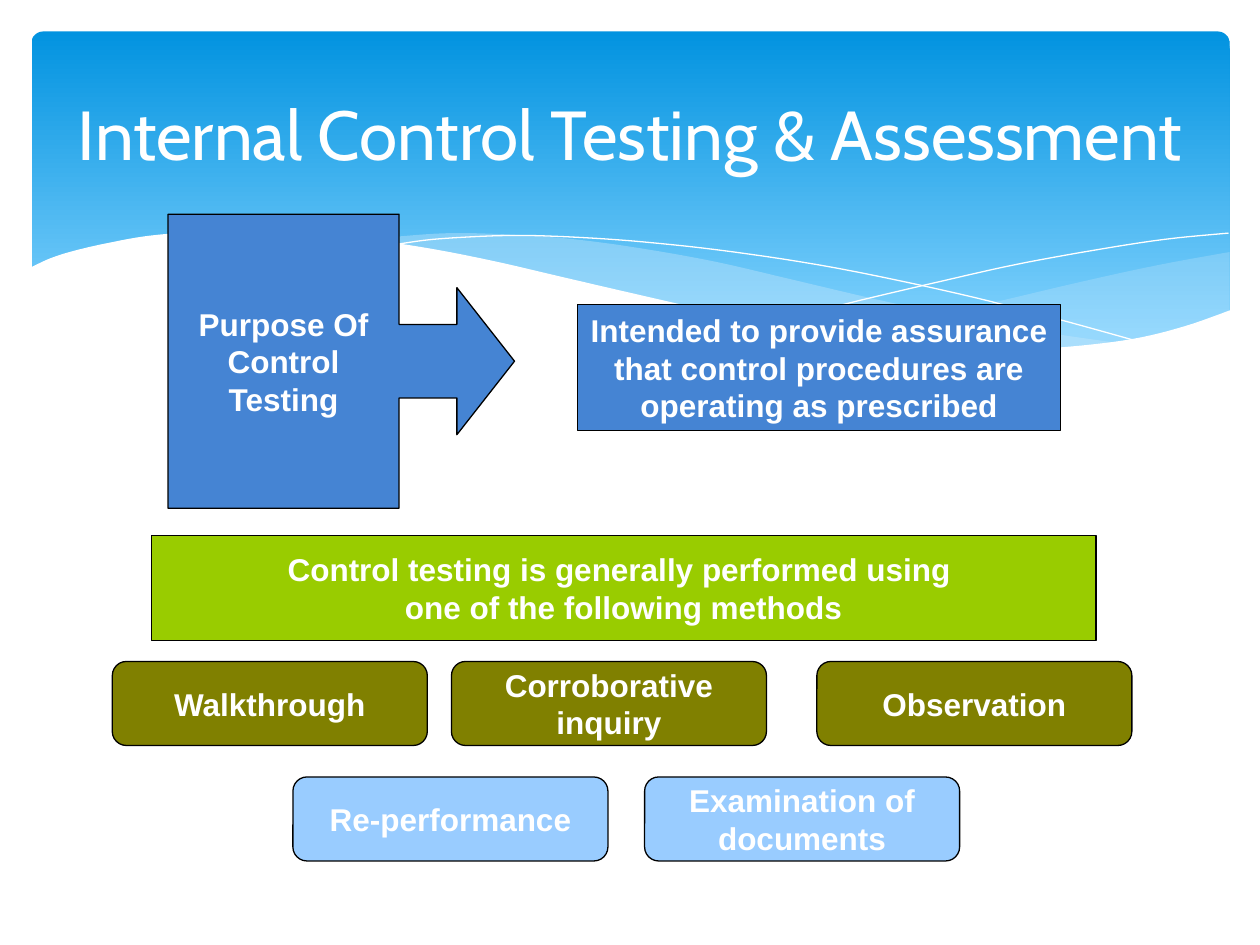
from dataclasses import dataclass
from typing import Optional

from lxml import etree
from pptx import Presentation, util as u
from pptx.dml.color import RGBColor
from pptx.enum import shapes as s, text as t
from pptx.oxml.ns import qn

COLS, ROWS = 120, 90  # square cells, twelve to the inch
WHITE, BLACK, MIST = "FFFFFF", "000000", "C6E7FC"
BLUE, LIME, OLIVE, SKY = "4584D3", "99CC00", "808000", "99CCFF"

prs = Presentation()
prs.slide_width, prs.slide_height = u.Inches(10), u.Inches(7.5)
slide = prs.slides.add_slide(prs.slide_layouts[6])
CELL_W, CELL_H = prs.slide_width / COLS, prs.slide_height / ROWS
MIL = prs.slide_width / 1000  # wave points are thousandths of the width


@dataclass
class Box:
    col: float
    row: float
    cols: float
    rows: float
    fill: str
    words: str
    kind: int = s.MSO_SHAPE.RECTANGLE
    adj: tuple = ()


@dataclass
class Wave:
    curves: list  # smooth runs, joined end to end
    fill: Optional[str] = None
    alpha: int = 100


def color(code: str) -> RGBColor:
    return RGBColor.from_string(code)


def place(col: float, row: float, cols: float, rows: float) -> list:
    return [u.Emu(round(n)) for n in
            (col * CELL_W, row * CELL_H, cols * CELL_W, rows * CELL_H)]


def write(shape, words: str, size: float, font: str, bold: bool, wrap: bool) -> None:
    frame = shape.text_frame
    frame.text = words
    frame.word_wrap = wrap
    frame.vertical_anchor = t.MSO_ANCHOR.MIDDLE
    for para in frame.paragraphs:
        para.alignment = t.PP_ALIGN.CENTER
        for run in para.runs:
            run.font.size, run.font.name, run.font.bold = u.Pt(size), font, bold
            run.font.color.rgb = color(WHITE)


def draw_box(box: Box) -> None:
    shape = slide.shapes.add_shape(
        box.kind, *place(box.col, box.row, box.cols, box.rows))
    shape.shadow.inherit = False
    for i, value in enumerate(box.adj):
        shape.adjustments[i] = value
    shape.fill.solid()
    shape.fill.fore_color.rgb = color(box.fill)
    shape.line.color.rgb = color(BLACK)
    shape.line.width = u.Pt(0.75)
    write(shape, box.words, 18, "Arial", True, False)


def smooth(knots: list, steps: int = 6) -> list:
    """Catmull-Rom curve through the knots."""
    ends = [knots[0], *knots, knots[-1]]
    out = [knots[0]]
    for a, b, c, d in zip(ends, ends[1:], ends[2:], ends[3:]):
        for k in range(1, steps + 1):
            f = k / steps
            out.append(tuple(
                (2 * q + (r - p) * f + (2 * p - 5 * q + 4 * r - v) * f ** 2
                 + (3 * q - p - 3 * r + v) * f ** 3) / 2
                for p, q, r, v in zip(a, b, c, d)))
    return out


def draw_wave(wave: Wave) -> None:
    dots = [(x * MIL, y * MIL) for run in wave.curves for x, y in smooth(run)]
    path = slide.shapes.build_freeform(*dots[0], scale=1.0)
    path.add_line_segments(dots[1:], close=wave.fill is not None)
    shape = path.convert_to_shape()
    shape.shadow.inherit = False
    if wave.fill is None:
        shape.fill.background()
        shape.line.color.rgb = color(WHITE)
        shape.line.width = u.Pt(0)
        return
    shape.line.fill.background()
    shape.fill.solid()
    shape.fill.fore_color.rgb = color(wave.fill)
    if wave.alpha < 100:
        tint = shape.fill._xPr.find(qn("a:solidFill"))[0]
        etree.SubElement(tint, qn("a:alpha"), val=str(wave.alpha * 1000))


# Header panel
panel = slide.shapes.add_shape(
    s.MSO_SHAPE.ROUNDED_RECTANGLE, *place(3, 3, 114.1, 32.4))
panel.adjustments[0] = 0.034
panel.shadow.inherit = False
panel.line.fill.background()
panel.fill.gradient()
panel.fill.gradient_angle = 270
for stop, (spot, code) in zip(panel.fill.gradient_stops,
                              [(0, "0293E0"), (0.9, "83D3FE")]):
    stop.position, stop.color.rgb = spot, color(code)

# Waves below the header
WAVES = [
    Wave([[(976, 200), (921, 210), (861, 223), (753, 248), (661, 265)],
          [(661, 265), (719, 272), (769, 277), (814, 278), (854, 276),
           (905, 269), (942, 259), (976, 247)]], MIST, 29),
    Wave([[(893, 273), (837, 265), (775, 254), (706, 240), (629, 222),
           (569, 208), (514, 198), (465, 191), (420, 187), (361, 185),
           (313, 188), (286, 191)],
          [(286, 191), (342, 199), (404, 211), (449, 222), (530, 240),
           (601, 255), (665, 266), (722, 274), (773, 277), (818, 278),
           (857, 277), (893, 273)]], MIST, 40),
    Wave([[(309, 195), (344, 190), (401, 187), (450, 188), (510, 192),
           (582, 200), (665, 213), (760, 233), (831, 251), (907, 272)]]),
    Wave([[(613, 257), (672, 241), (748, 223), (806, 210), (866, 199),
           (924, 190), (975, 185)]]),
    Wave([[(977, 246), (940, 259), (899, 269), (850, 275), (809, 277),
           (761, 275), (708, 270), (648, 262), (579, 250), (503, 233),
           (447, 220), (391, 207), (340, 197), (292, 190), (250, 186),
           (211, 184), (161, 184), (119, 187), (85, 193), (59, 199),
           (40, 205), (23, 213)], [(23, 329), (977, 329)]], WHITE),
]
for wave in WAVES:
    draw_wave(wave)

# Title
title = slide.shapes.add_textbox(*place(6, 4.4, 108, 16.4))
write(title, "Internal Control Testing & Assessment", 39.6, "Cabin", False, True)

# Purpose, its meaning, and the lead-in to the methods
for box in [
    Box(16, 20.4, 33, 28, BLUE, "Purpose Of\nControl\nTesting",
        s.MSO_SHAPE.RIGHT_ARROW_CALLOUT, (0.25, 0.25, 0.196, 0.667)),
    Box(55, 29, 46, 12, BLUE, "Intended to provide assurance\n"
        "that control procedures are\noperating as prescribed"),
    Box(14.4, 51, 90, 10, LIME, "Control testing is generally performed using \n"
        "one of the following methods"),
]:
    draw_box(box)

# Methods, in two rows
METHODS = [
    (63, OLIVE, [(10.7, "Walkthrough"), (43, "Corroborative\ninquiry"),
                 (77.8, "Observation")]),
    (74, SKY, [(27.9, "Re-performance"), (61.4, "Examination of\ndocuments")]),
]
for row, fill, items in METHODS:
    for col, words in items:
        draw_box(Box(col, row, 30, 8, fill, words,
                     s.MSO_SHAPE.ROUNDED_RECTANGLE, (0.167,)))

prs.save("out.pptx")
